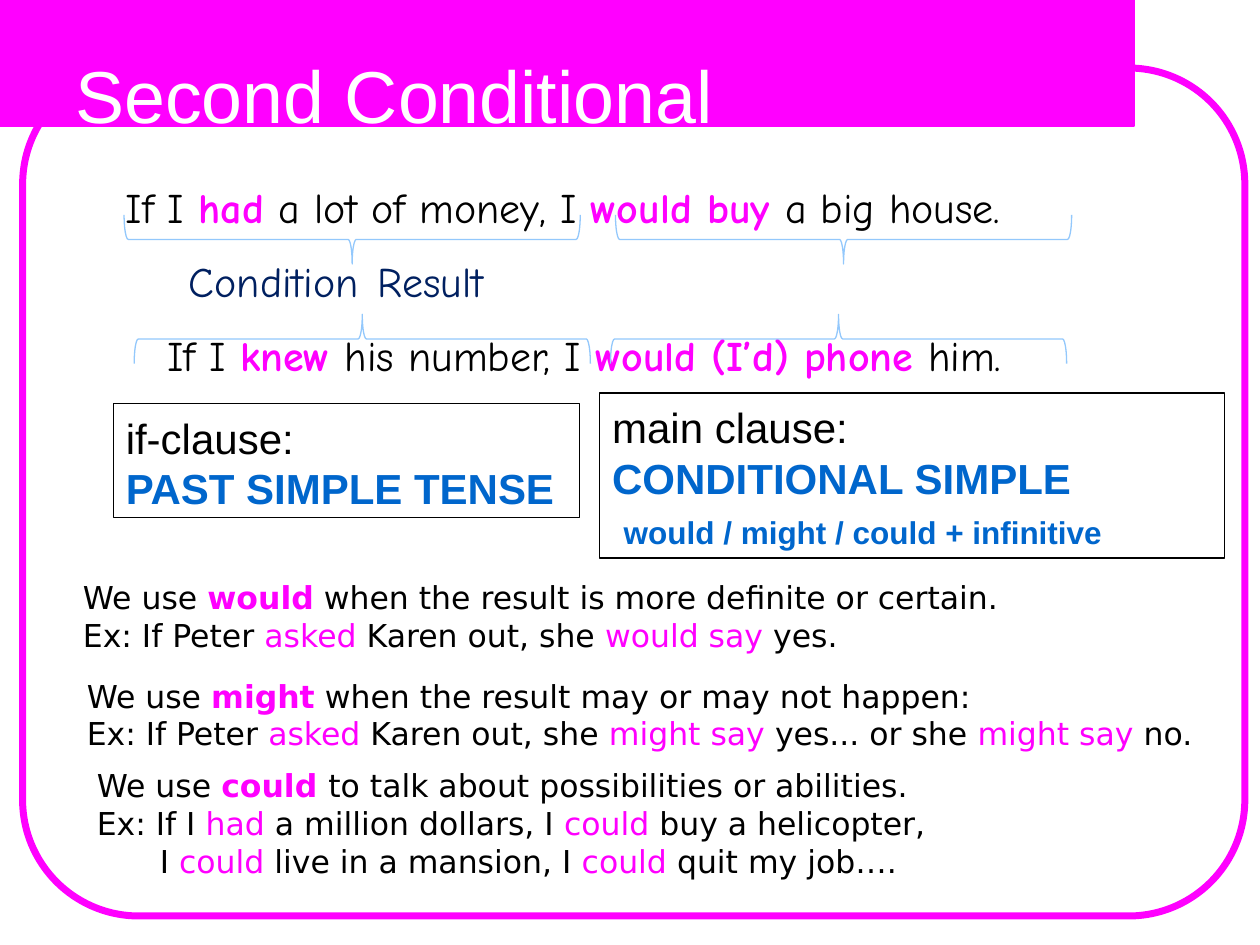
import math
from dataclasses import dataclass
from typing import NamedTuple

from pptx import Presentation
from pptx import util as u
from pptx.dml.color import RGBColor
from pptx.enum import shapes, text

COLORS = {
    "magenta": "FF00FF",
    "black": "000000",
    "white": "FFFFFF",
    "navy": "002060",
    "blue": "0066CC",
    "sky": "93C8FC",
}


class Span(NamedTuple):
    text: str
    color: str = "black"
    bold: bool = False
    size: float | None = None


class Area(NamedTuple):
    left: float
    top: float
    width: float
    height: float


@dataclass
class TextBlock:
    area: Area
    paragraphs: list[list[Span]]
    font: str
    size: float
    wrap: bool = True
    outlined: bool = False
    space_before: float = 0
    inset_top: float = 0.05
    indents: tuple[float, ...] = ()


@dataclass
class Brace:
    left: float
    top: float
    rotation: int


def key(words: str, bold: bool = False) -> Span:
    return Span(words, "magenta", bold)


def color(name: str) -> RGBColor:
    return RGBColor.from_string(COLORS[name])


def inches(area: Area) -> list[int]:
    return [u.Inches(value) for value in area]


def style(shape, *, line: str, width: float, fill: str | None = None) -> None:
    shape.shadow.inherit = False
    if fill:
        shape.fill.solid()
        shape.fill.fore_color.rgb = color(fill)
    else:
        shape.fill.background()
    shape.line.color.rgb = color(line)
    shape.line.width = u.Pt(width)


def write(para, span: Span, *, font: str, size: float) -> None:
    for number, words in enumerate(span.text.split("\n")):
        if number:
            para.add_line_break()
        if words:
            run = para.add_run()
            run.text = words
            run.font.name = font
            run.font.size = u.Pt(span.size or size)
            run.font.bold = span.bold
            run.font.color.rgb = color(span.color)


def draw_text(page, block: TextBlock) -> None:
    if block.outlined:
        box = page.shapes.add_shape(shapes.MSO_SHAPE.RECTANGLE, *inches(block.area))
        style(box, line="black", width=0.75)
    else:
        box = page.shapes.add_textbox(*inches(block.area))
    frame = box.text_frame
    frame.word_wrap = block.wrap
    frame.vertical_anchor = text.MSO_ANCHOR.TOP
    frame.margin_top = u.Inches(block.inset_top)
    for number, spans in enumerate(block.paragraphs):
        para = frame.add_paragraph() if number else frame.paragraphs[0]
        para.alignment = text.PP_ALIGN.LEFT
        if number:
            para.space_before = u.Pt(block.space_before)
        if block.indents and block.indents[number]:
            para._p.get_or_add_pPr().set("marL", str(u.Inches(block.indents[number])))
        for span in spans:
            write(para, span, font=block.font, size=block.size)


def draw_brace(page, brace: Brace) -> None:
    area = Area(brace.left, brace.top, 0.39, 3.62)
    shape = page.shapes.add_shape(shapes.MSO_SHAPE.LEFT_BRACE, *inches(area))
    shape.rotation = brace.rotation
    style(shape, line="sky", width=0.75)


def draw_frame(page) -> None:
    border = page.shapes.add_shape(
        shapes.MSO_SHAPE.ROUNDED_RECTANGLE, *inches(Area(0.18, 0.54, 9.7, 6.73))
    )
    border.adjustments[0] = 0.137
    style(border, line="magenta", width=4)

    center, radius, steps = 8.7, 0.63, 48
    angles = [math.pi * (step / steps - 0.5) for step in range(steps + 1)]
    curve = [
        (center + radius * math.cos(angle), radius + radius * math.sin(angle))
        for angle in angles
    ]
    builder = page.shapes.build_freeform(0, 0, scale=u.Inches(1))
    builder.add_line_segments(curve + [(0, 2 * radius)], close=True)
    style(builder.convert_to_shape(), line="magenta", width=0.75, fill="magenta")


TITLE = TextBlock(
    Area(0.5, 0.3, 9, 1.25), [[Span("Second Conditional", "white")]],
    "Arial", 42, inset_top=0.1,
)
EXAMPLES = TextBlock(
    Area(0.9, 1.39, 7.95, 1.72),
    [
        [Span("If I "), key("had ", True), Span("a lot of money, I "),
         key("would buy ", True), Span("a big house.")],
        [Span("\tCondition\tResult", "navy")],
        [Span("If I "), key("knew ", True), Span("his number, I "),
         key("would (I’d) phone ", True), Span("him.")],
    ],
    "Comic Neue", 24, space_before=13.5, indents=(0, 0, 0.33),
)
CLAUSES = [
    TextBlock(
        Area(0.9, 3.2, 3.7, 0.91),
        [[Span("if-clause:\n"), Span("PAST SIMPLE TENSE", "blue", True)]],
        "Arial", 24, outlined=True, inset_top=0.07,
    ),
    TextBlock(
        Area(4.76, 3.12, 4.96, 1.31),
        [[Span("main clause:\n"), Span("CONDITIONAL SIMPLE\n ", "blue", True),
          Span("would / might / could + infinitive", "blue", True, 18)]],
        "Arial", 24, outlined=True, inset_top=0.07,
    ),
]
USES = [
    TextBlock(
        Area(0.59, 5.32, 9.19, 0.71),
        [
            [Span("We use "), key("might", True),
             Span(" when the result may or may not happen:")],
            [Span("Ex: If Peter "), key("asked"), Span(" Karen out, she "),
             key("might say "), Span("yes... or she "), key("might say "), Span("no.")],
        ],
        "DejaVu Sans", 18, wrap=False,
    ),
    TextBlock(
        Area(0.56, 4.54, 7.62, 0.71),
        [
            [Span("We use "), key("would", True),
             Span(" when the result is more definite or certain.")],
            [Span("Ex: If Peter "), key("asked"), Span(" Karen out, she "),
             key("would say "), Span("yes.")],
        ],
        "DejaVu Sans", 18, wrap=False,
    ),
    TextBlock(
        Area(0.67, 6.03, 7.09, 1.01),
        [
            [Span("We use "), key("could ", True),
             Span("to talk about possibilities or abilities.")],
            [Span("Ex: If I "), key("had"), Span(" a million dollars, I "),
             key("could"), Span(" buy a helicopter,")],
            [Span("\tI "), key("could"), Span(" live in a mansion, I "),
             key("could"), Span(" quit my job….")],
        ],
        "DejaVu Sans", 18, wrap=False,
    ),
]
BRACES = [
    Brace(2.6, 0.09, 270), Brace(6.5, 0.09, 270),
    Brace(2.68, 0.88, 90), Brace(6.46, 0.88, 90),
]


def main() -> None:
    """Build the Second Conditional grammar slide."""
    deck = Presentation()
    deck.slide_width, deck.slide_height = u.Inches(10), u.Inches(7.5)
    page = deck.slides.add_slide(deck.slide_layouts[6])
    draw_frame(page)
    for block in [TITLE, EXAMPLES, *CLAUSES, *USES]:
        draw_text(page, block)
    for brace in BRACES:
        draw_brace(page, brace)
    deck.save("out.pptx")


if __name__ == "__main__":
    main()
